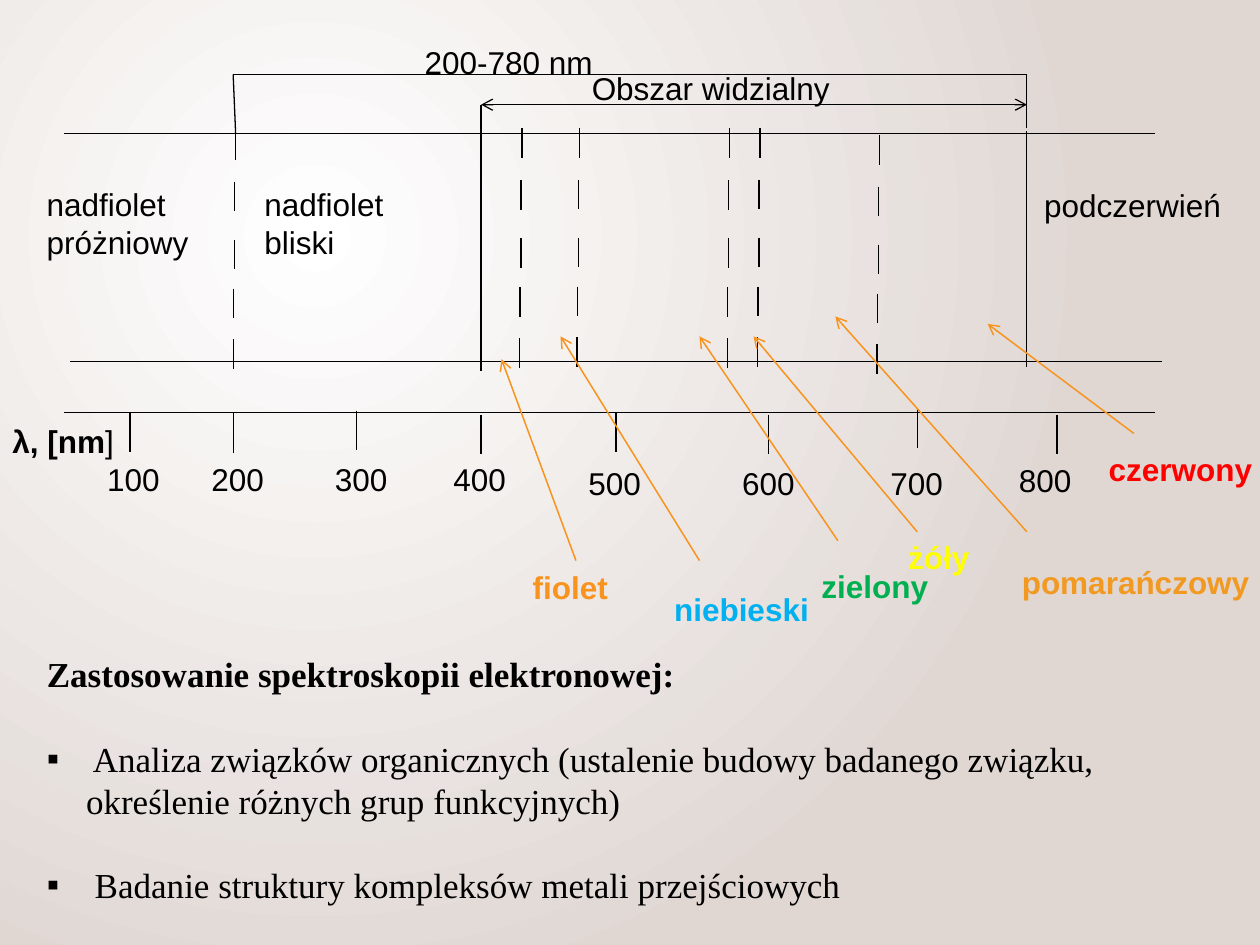
"""Build a slide showing the spectral ranges of electronic spectroscopy and its uses."""
import dataclasses

import lxml.etree
import pptx
import pptx.dml.color
import pptx.enum.shapes
import pptx.enum.text
import pptx.oxml.ns
import pptx.util

Cm, Pt = pptx.util.Cm, pptx.util.Pt
qn = pptx.oxml.ns.qn


@dataclasses.dataclass(frozen=True)
class Theme:
    ink: str = "000000"
    arrow: str = "F8931D"
    center: str = "FFFFFF"
    edge: str = "E0D7D3"
    label_font: str = "Arial"
    text_font: str = "Times New Roman"
    label_size: int = 18
    text_size: int = 20
    line_width: float = 0.75
    arrow_width: float = 0.85


THEME = Theme()

HEADING = "Zastosowanie spektroskopii elektronowej:"
USES = [
    " Analiza związków organicznych (ustalenie budowy badanego związku, określenie różnych grup funkcyjnych)",
    " Badanie struktury kompleksów metali przejściowych",
]

# wavelength, tick x, tick top, label left, label top, label width
SCALE = [
    ("100", 2.62, 8.31, 1.91, 9.14, 1.6),
    ("200", 4.7, 8.33, 4.01, 9.14, 2.01),
    ("300", 7.19, 8.28, 6.5, 9.14, 1.8),
    ("400", 9.7, 8.36, 8.89, 9.14, 1.6),
    ("500", 12.42, 8.31, 11.61, 9.22, 1.6),
    ("600", 15.49, 8.36, 14.71, 9.22, 1.6),
    ("700", 18.49, 8.23, 17.7, 9.22, 2.21),
    ("800", 21.31, 8.36, 20.29, 9.17, 2.01),
]
TICK_LENGTH = 0.8

FRAME_LINES = [
    (1.3, 8.31, 23.29, 8.31),
    (1.3, 2.69, 23.29, 2.69),
    (1.42, 7.29, 23.42, 7.29),
    (9.7, 7.47, 9.7, 2.69),
    (9.7, 2.69, 9.7, 2.11),
    (20.7, 7.39, 20.7, 2.64),
    (20.7, 2.59, 20.7, 2.01),
    (4.75, 2.69, 4.7, 1.5),
    (4.7, 1.5, 20.7, 1.5),
    (20.7, 1.5, 20.7, 2.01),
]
VISIBLE_RANGE = (9.7, 2.11, 20.7, 2.11)

BOUNDARIES = [(4.75, 2.62), (10.52, 2.59), (11.68, 2.58), (14.71, 2.59), (15.32, 2.58), (17.73, 2.72)]
DASHES = [(0, 0), (-0.02, 1.04), (-0.02, 2.21), (-0.04, 3.2), (-0.05, 4.22)]
DASH_LENGTH = 0.6

LABEL_HEIGHT = 1.02
REGIONS = [
    ("nadfiolet próżniowy", 0.69, 3.61, 4.01, 1.8),
    ("nadfiolet bliski", 5.08, 3.61, 4.27, 1.8),
    ("200-780 nm", 8.31, 0.74, 8.31, LABEL_HEIGHT),
    ("Obszar widzialny", 11.68, 1.27, 8.66, LABEL_HEIGHT),
    ("podczerwień", 20.8, 3.63, 4.45, LABEL_HEIGHT),
]
AXIS_TITLE = [("λ, [nm", True), ("]", False)]

COLOURS = [
    ("fiolet", "F8931D", (11.61, 11.3, 10.11, 7.24), (10.49, 11.33, 5.82)),
    ("niebieski", "00B0F0", (14.1, 11.3, 11.3, 6.78), (13.34, 11.76, 4.32)),
    ("zielony", "00B050", (16.89, 10.9, 14.1, 6.78), (16.31, 11.3, 5.0)),
    ("żóły", "FFFF00", (18.49, 10.72, 15.19, 6.78), (18.06, 10.72, 3.2)),
    ("pomarańczowy", "F29922", (20.7, 10.72, 16.84, 6.38), (20.35, 11.23, 5.11)),
    ("czerwony", "FF0000", (22.86, 8.74, 19.91, 6.53), (22.1, 8.94, 3.61)),
]


def rgb(value):
    return pptx.dml.color.RGBColor.from_string(value)


def paint_background(slide):
    fill = slide.background.fill
    fill.gradient()
    for stop, position, colour in zip(fill.gradient_stops, (0, 1), (THEME.center, THEME.edge)):
        stop.position = position
        stop.color.rgb = rgb(colour)
    gradient = slide.element.find(".//" + qn("a:gradFill"))
    linear = gradient.find(qn("a:lin"))
    circle = lxml.etree.Element(qn("a:path"), path="circle")
    lxml.etree.SubElement(circle, qn("a:fillToRect"), l="50000", t="50000", r="100000", b="100000")
    gradient.replace(linear, circle)


def add_line(slide, ends, colour=THEME.ink, width=THEME.line_width, arrowheads=()):
    straight = pptx.enum.shapes.MSO_CONNECTOR.STRAIGHT
    connector = slide.shapes.add_connector(straight, *map(Cm, ends))
    connector.line.color.rgb = rgb(colour)
    connector.line.width = Pt(width)
    outline = connector.element.spPr.find(qn("a:ln"))
    for end in arrowheads:
        lxml.etree.SubElement(outline, qn("a:" + end), type="arrow")
    lxml.etree.SubElement(connector.element.spPr, qn("a:effectLst"))


def set_font(para, name, size, colour=THEME.ink, bold=None):
    para.font.name = name
    para.font.size = Pt(size)
    para.font.color.rgb = rgb(colour)
    para.font.bold = bold


def add_label(slide, spans, left, top, width, height=LABEL_HEIGHT, colour=THEME.ink, bold=None):
    box = slide.shapes.add_textbox(*map(Cm, (left, top, width, height)))
    box.text_frame.word_wrap = True
    para = box.text_frame.paragraphs[0]
    set_font(para, THEME.label_font, THEME.label_size, colour, bold)
    for text, emphasis in spans:
        span = para.add_run()
        span.text = text
        span.font.bold = emphasis


def place(holder, left, top, width, height):
    holder.left, holder.top, holder.width, holder.height = map(Cm, (left, top, width, height))
    frame = holder.text_frame
    frame.word_wrap = True
    frame.auto_size = pptx.enum.text.MSO_AUTO_SIZE.NONE
    frame.vertical_anchor = pptx.enum.text.MSO_ANCHOR.TOP
    return frame


def write_uses(slide):
    title = place(slide.shapes.title, 0.69, 13.03, 23.22, 1.1)
    title.text = HEADING
    title.paragraphs[0].alignment = pptx.enum.text.PP_ALIGN.LEFT
    set_font(title.paragraphs[0], THEME.text_font, THEME.text_size, bold=True)

    body = place(slide.placeholders[1], 0.69, 14.73, 23.22, 3.7)
    body.text = "\n".join(USES)
    for index, para in enumerate(body.paragraphs):
        para.space_before = Pt(24 if index else 0)
        properties = para._p.get_or_add_pPr()
        properties.set("marL", str(Cm(0.79)))
        properties.set("indent", str(-Cm(0.79)))
        lxml.etree.SubElement(properties, qn("a:buChar"), char="▪")
        set_font(para, THEME.text_font, THEME.text_size)


def main():
    deck = pptx.Presentation()
    deck.slide_width, deck.slide_height = Cm(25.4), Cm(19.05)
    slide = deck.slides.add_slide(deck.slide_layouts[1])
    paint_background(slide)
    for ends in FRAME_LINES:
        add_line(slide, ends)
    for wavelength, x, top, *spot in SCALE:
        add_line(slide, (x, top, x, top + TICK_LENGTH))
        add_label(slide, [(wavelength, None)], *spot)
    add_label(slide, AXIS_TITLE, 0, 8.38, 5.66)
    for x, top in BOUNDARIES:
        for shift, drop in DASHES:
            add_line(slide, (x + shift, top + drop, x + shift, top + drop + DASH_LENGTH))
    add_line(slide, VISIBLE_RANGE, arrowheads=("headEnd", "tailEnd"))
    for name, *spot in REGIONS:
        add_label(slide, [(name, None)], *spot)
    for name, colour, ends, spot in COLOURS:
        add_line(slide, ends, THEME.arrow, THEME.arrow_width, ("tailEnd",))
        add_label(slide, [(name, None)], *spot, colour=colour, bold=True)
    write_uses(slide)
    deck.save("out.pptx")


if __name__ == "__main__":
    main()
